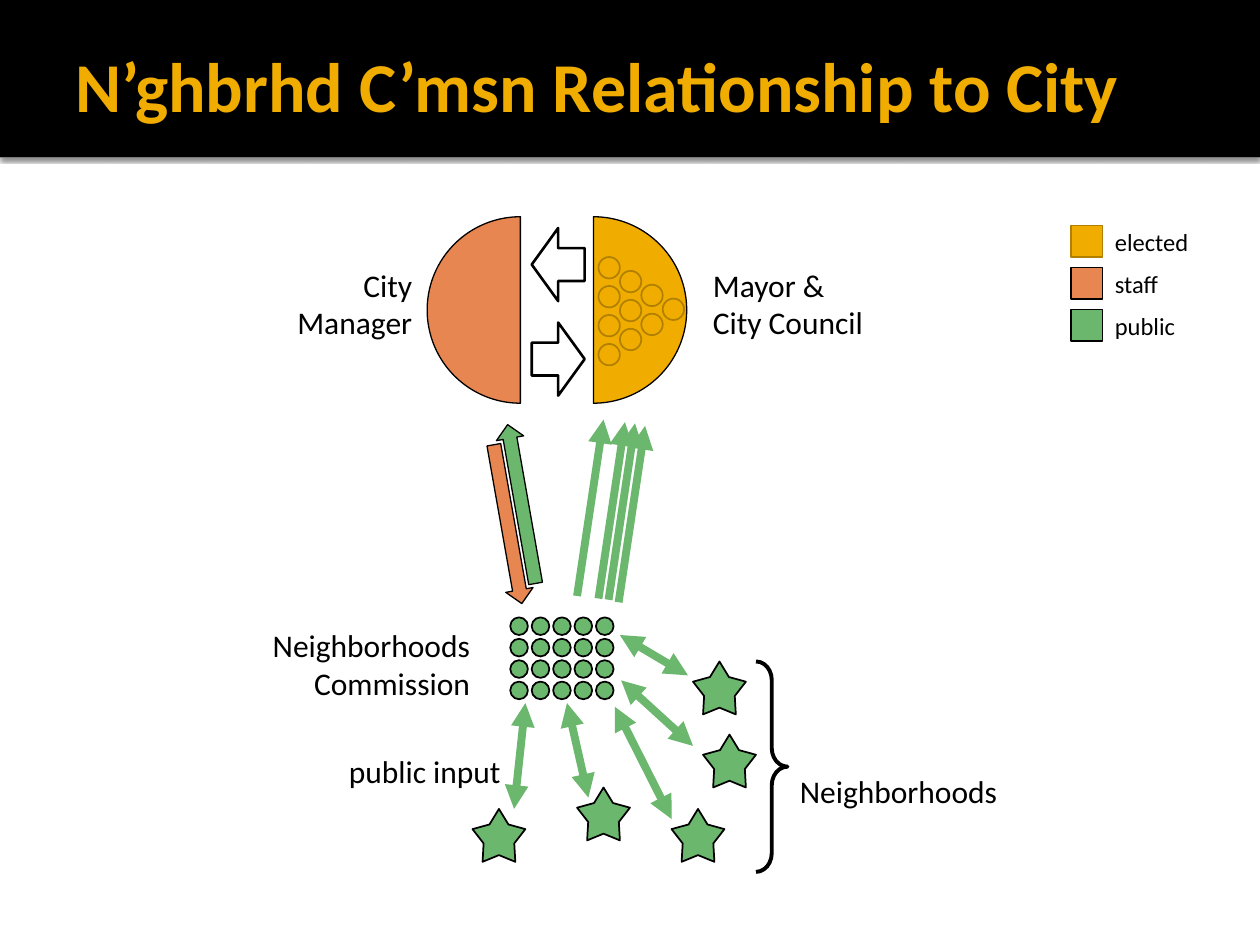
"""Build the slide on how the neighborhoods commission relates to the city."""
from lxml.etree import SubElement
from pptx import Presentation
from pptx.dml.color import RGBColor
from pptx.enum.shapes import MSO_CONNECTOR, MSO_SHAPE as Kind
from pptx.enum.text import MSO_ANCHOR, PP_ALIGN
from pptx.oxml.ns import qn
from pptx.util import Inches, Pt

GOLD, DARK, RUST, GREEN = "F0AD00", "B28000", "E88651", "6BB76D"
BLACK, WHITE = "000000", "FFFFFF"

TITLE = "N’ghbrhd C’msn Relationship to City"
LABELS = [
    (["Mayor &", "City Council"], (5.56, 2.06, 1.4, 0.7), PP_ALIGN.LEFT),
    (["City", "Manager"], (2.25, 2.06, 1.12, 0.7), PP_ALIGN.RIGHT),
    (["public input"], (2.67, 5.92, 1.78, 0.4), PP_ALIGN.LEFT),
    (["Neighborhoods", "Commission"], (2, 4.92, 1.83, 0.71), PP_ALIGN.RIGHT),
    (["Neighborhoods"], (6.25, 6.08, 1.83, 0.4), PP_ALIGN.LEFT),
]
LEGEND = [("elected", GOLD, DARK, 1), ("staff", RUST, BLACK, 0.75),
          ("public", GREEN, BLACK, 0.75)]
HALVES = [(3.97, GOLD, (162, 54)), (3.39, RUST, (54, 162))]
SWAPS = [(Kind.LEFT_ARROW, 1.81), (Kind.RIGHT_ARROW, 2.56)]
STARS = [(5.58, 5.83), (5.33, 6.42), (4.58, 6.25), (5.5, 5.25), (3.75, 6.42)]
INPUTS = [((4.08, 6.42), (4.17, 5.58)), ((5.5, 5.92), (4.93, 5.4)),
          ((5.33, 6.5), (4.88, 5.61)), ((4.67, 6.33), (4.5, 5.58)),
          ((5.46, 5.36), (4.92, 5.04))]
REPORTS = [(4.58, 4.73), (4.75, 4.75), (4.83, 4.76), (4.91, 4.78)]
STAFF = [(3.92, 3.52, RUST, 170), (4.03, 3.36, GREEN, 350)]


def color(code):
    return RGBColor.from_string(code)


def assign(item, values):
    for name, value in values.items():
        setattr(item, name, value)


def draw(shapes, kind, box, fill=None, line=None, width=1, adjust=(), turn=0):
    shape = shapes.add_shape(kind, *map(Inches, box))
    shape.shadow.inherit = False
    shape.rotation = turn
    for i, value in enumerate(adjust):
        shape.adjustments[i] = value
    if fill:
        shape.fill.solid()
        shape.fill.fore_color.rgb = color(fill)
    else:
        shape.fill.background()
    if line:
        shape.line.color.rgb = color(line)
        shape.line.width = Pt(width)
    else:
        shape.line.fill.background()
    return shape


def link(shapes, start, end, ends):
    line = shapes.add_connector(MSO_CONNECTOR.STRAIGHT, *map(Inches, start + end))
    line.line.color.rgb = color(GREEN)
    line.line.width = Pt(4.5)
    for name in ends:
        SubElement(line.line._get_or_add_ln(), qn("a:" + name), type="triangle")
    SubElement(line._element.spPr, qn("a:effectLst"))


def write(shapes, lines, box, size, align=PP_ALIGN.LEFT, tint=BLACK, wrap=False,
          **frame):
    text = shapes.add_textbox(*map(Inches, box)).text_frame
    assign(text, {"word_wrap": wrap, **frame})
    text.text = "\n".join(lines)
    for para in text.paragraphs:
        para.alignment = align
        assign(para.runs[0].font, {"name": "Calibri", "size": Pt(size),
                                   "bold": size == 40})
        para.runs[0].font.color.rgb = color(tint)


def shade(shape):
    cast = SubElement(shape._element.spPr.find(qn("a:effectLst")),
                      qn("a:outerShdw"), blurRad=str(Pt(2.5)), dist=str(Pt(0.8)),
                      dir="5400000", algn="tl", rotWithShape="0")
    tint = SubElement(cast, qn("a:srgbClr"), val=BLACK)
    SubElement(tint, qn("a:alpha"), val="60000")


def header(shapes):
    shade(draw(shapes, Kind.RECTANGLE, (0, 1.2, 10, 0.05), WHITE))
    draw(shapes, Kind.RECTANGLE, (0, 0, 10, 1.25), BLACK)
    write(shapes, [TITLE], (0.5, 0.17, 9.17, 1), 40, tint=GOLD, wrap=True,
          vertical_anchor=MSO_ANCHOR.MIDDLE, margin_right=Inches(0.05))


def city(shapes):
    for x, fill, angles in HALVES:
        draw(shapes, Kind.CHORD, (x, 1.72, 1.48, 1.48), fill, BLACK, 0.75, angles)
    for kind, y in SWAPS:
        draw(shapes, kind, (4.22, y, 0.42, 0.58), None, BLACK, 1.5, (0.45, 0.5))
    seats = shapes.add_group_shape().shapes
    for col in range(4):
        for row in range(4 - col):
            x, y = 4.75 + 0.17 * col, 2.04 + 0.11 * col + 0.23 * row
            draw(seats, Kind.OVAL, (x, y, 0.17, 0.17), GOLD, DARK)
    votes = shapes.add_group_shape().shapes
    for x, y in REPORTS:
        link(votes, (x, y), (x + 0.21, y - 1.4), ["tailEnd"])
    for x, y, fill, turn in STAFF:
        draw(shapes, Kind.UP_ARROW, (x, y, 0.22, 1.28), fill, BLACK, 0.75, turn=turn)


def public(shapes):
    for start, end in INPUTS:
        link(shapes, start, end, ["headEnd", "tailEnd"])
    for x, y in STARS:
        draw(shapes, Kind.STAR_5_POINT, (x, y, 0.42, 0.42), GREEN, BLACK, 1, (0.29,))
    draw(shapes, Kind.RIGHT_BRACE, (6, 5.25, 0.25, 1.67), None, BLACK, 2.25,
         (0.59, 0.5))
    board = shapes.add_group_shape().shapes
    for col in range(5):
        for row in range(4):
            x, y = 4.05 + 0.17 * col, 4.9 + 0.17 * row
            draw(board, Kind.OVAL, (x, y, 0.14, 0.14), GREEN, BLACK)


def legend(shapes):
    for i, (name, fill, line, width) in enumerate(LEGEND):
        y = 1.79 + i / 3
        draw(shapes, Kind.RECTANGLE, (8.5, y, 0.25, 0.25), fill, line, width)
        write(shapes, [name], (8.75, y - 0.04, 0.8, 0.34), 14)


def main():
    deck = Presentation()
    assign(deck, {"slide_width": Inches(10), "slide_height": Inches(7.5)})
    shapes = deck.slides.add_slide(deck.slide_layouts[6]).shapes
    for part in (header, city, public, legend):
        part(shapes)
    for lines, box, align in LABELS:
        write(shapes, lines, box, 18, align)
    deck.save("out.pptx")


if __name__ == "__main__":
    main()
